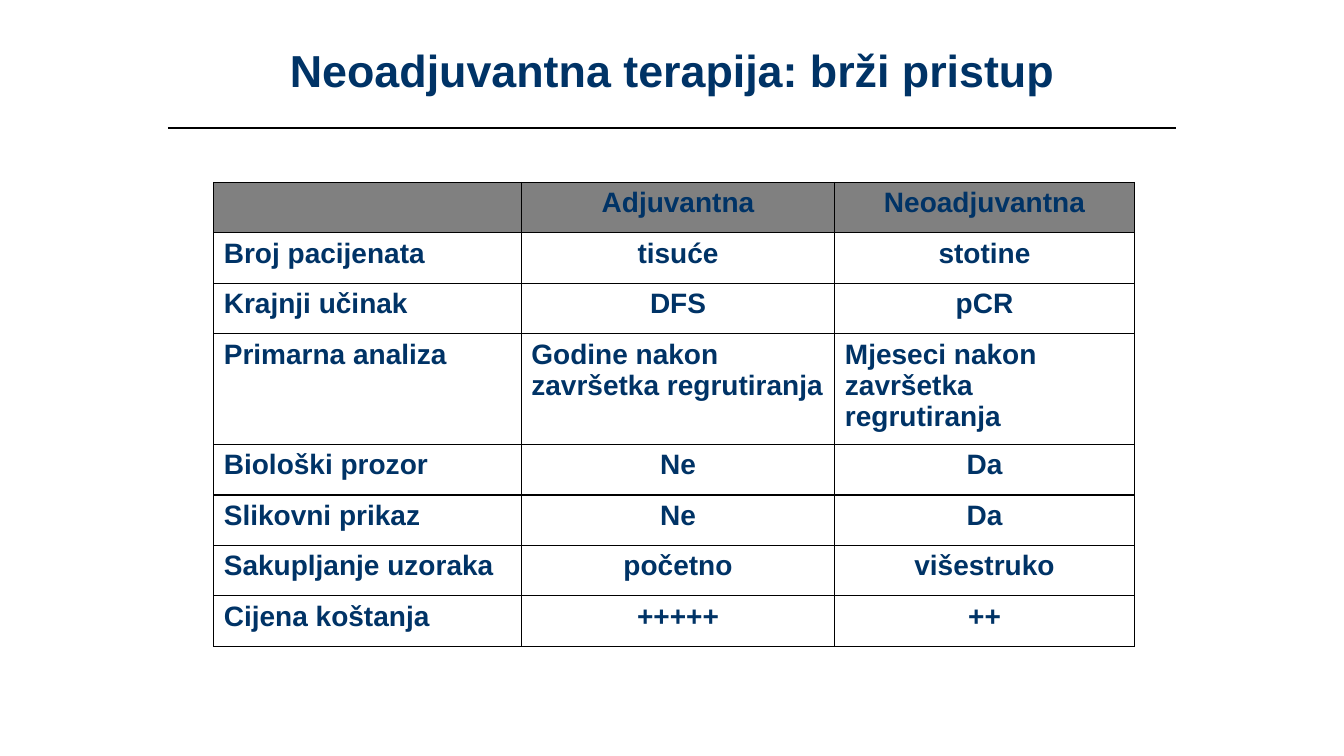
from dataclasses import dataclass

from lxml.etree import SubElement
from pptx import Presentation
from pptx.dml.color import RGBColor
from pptx.enum.shapes import MSO_CONNECTOR
from pptx.enum.text import MSO_ANCHOR, PP_ALIGN
from pptx.oxml.ns import qn
from pptx.util import Inches, Pt

TITLE = "Neoadjuvantna terapija: brži pristup"
ROWS = [
    ("", "Adjuvantna", "Neoadjuvantna"),
    ("Broj pacijenata", "tisuće", "stotine"),
    ("Krajnji učinak", "DFS", "pCR"),
    ("Primarna analiza", "Godine nakon završetka regrutiranja",
     "Mjeseci nakon završetka regrutiranja"),
    ("Biološki prozor", "Ne", "Da"),
    ("Slikovni prikaz", "Ne", "Da"),
    ("Sakupljanje uzoraka", "početno", "višestruko"),
    ("Cijena koštanja", "+++++", "++"),
]
ANALYSIS_ROW = 3


@dataclass(frozen=True)
class Theme:
    font: str = "Arial"
    text: str = "003366"
    header: str = "808080"
    line: str = "000000"
    title_size: int = 32
    table_size: int = 20
    rule_width: float = 1.5
    border_width: float = 1


THEME = Theme()
SLIDE_WIDTH, SLIDE_HEIGHT = 13.33, 7.5
TITLE_BOX = (2.42, 0.32, 8.5, 0.83)
RULE_MARGIN, RULE_TOP = SLIDE_WIDTH / 8, 1.27
TABLE_LEFT, TABLE_TOP = 2.12, 1.81
COLUMN_WIDTHS = (3.05, 3.11, 2.97)
ROW_HEIGHT, ANALYSIS_HEIGHT = 0.5, 1.1


def write(text_frame, text, size, alignment):
    paragraph = text_frame.paragraphs[0]
    paragraph.alignment = alignment
    run = paragraph.add_run()
    run.text = text
    run.font.color.rgb = RGBColor.from_string(THEME.text)
    font_format = {"name": THEME.font, "size": Pt(size), "bold": True}
    for attribute, value in font_format.items():
        setattr(run.font, attribute, value)


def add_borders(cell):
    """Line all four sides; borders must precede the fill in the cell XML."""
    properties = cell._tc.get_or_add_tcPr()
    for position, side in enumerate(("lnL", "lnR", "lnT", "lnB")):
        border = SubElement(properties, qn(f"a:{side}"), w=str(Pt(THEME.border_width)))
        fill = SubElement(border, qn("a:solidFill"))
        SubElement(fill, qn("a:srgbClr"), val=THEME.line)
        properties.insert(position, border)


def add_title(slide):
    text_frame = slide.shapes.add_textbox(*map(Inches, TITLE_BOX)).text_frame
    frame_format = {"word_wrap": True, "vertical_anchor": MSO_ANCHOR.TOP,
                    "margin_top": Inches(0.1)}
    for attribute, value in frame_format.items():
        setattr(text_frame, attribute, value)
    write(text_frame, TITLE, THEME.title_size, PP_ALIGN.CENTER)


def add_rule(slide):
    ends = (RULE_MARGIN, RULE_TOP, SLIDE_WIDTH - RULE_MARGIN, RULE_TOP)
    rule = slide.shapes.add_connector(MSO_CONNECTOR.STRAIGHT, *map(Inches, ends))
    rule.line.color.rgb = RGBColor.from_string(THEME.line)
    rule.line.width = Pt(THEME.rule_width)
    SubElement(rule._element.spPr, qn("a:effectLst"))


def add_comparison(slide):
    heights = [ANALYSIS_HEIGHT if index == ANALYSIS_ROW else ROW_HEIGHT
               for index in range(len(ROWS))]
    box = (TABLE_LEFT, TABLE_TOP, sum(COLUMN_WIDTHS), sum(heights))
    table = slide.shapes.add_table(
        len(ROWS), len(COLUMN_WIDTHS), *map(Inches, box)).table
    table.horz_banding = False
    for column, width in zip(table.columns, COLUMN_WIDTHS):
        column.width = Inches(width)
    for row_index, (row, height, texts) in enumerate(zip(table.rows, heights, ROWS)):
        row.height = Inches(height)
        for column_index, (cell, text) in enumerate(zip(row.cells, texts)):
            if row_index == 0:
                cell.fill.solid()
                cell.fill.fore_color.rgb = RGBColor.from_string(THEME.header)
            else:
                cell.fill.background()
            add_borders(cell)
            if text:
                is_left = column_index == 0 or row_index == ANALYSIS_ROW
                alignment = PP_ALIGN.LEFT if is_left else PP_ALIGN.CENTER
                write(cell.text_frame, text, THEME.table_size, alignment)


def main():
    presentation = Presentation()
    presentation.slide_width = Inches(SLIDE_WIDTH)
    presentation.slide_height = Inches(SLIDE_HEIGHT)
    slide = presentation.slides.add_slide(presentation.slide_layouts[6])
    add_rule(slide)
    add_title(slide)
    add_comparison(slide)
    presentation.save("out.pptx")


if __name__ == "__main__":
    main()
